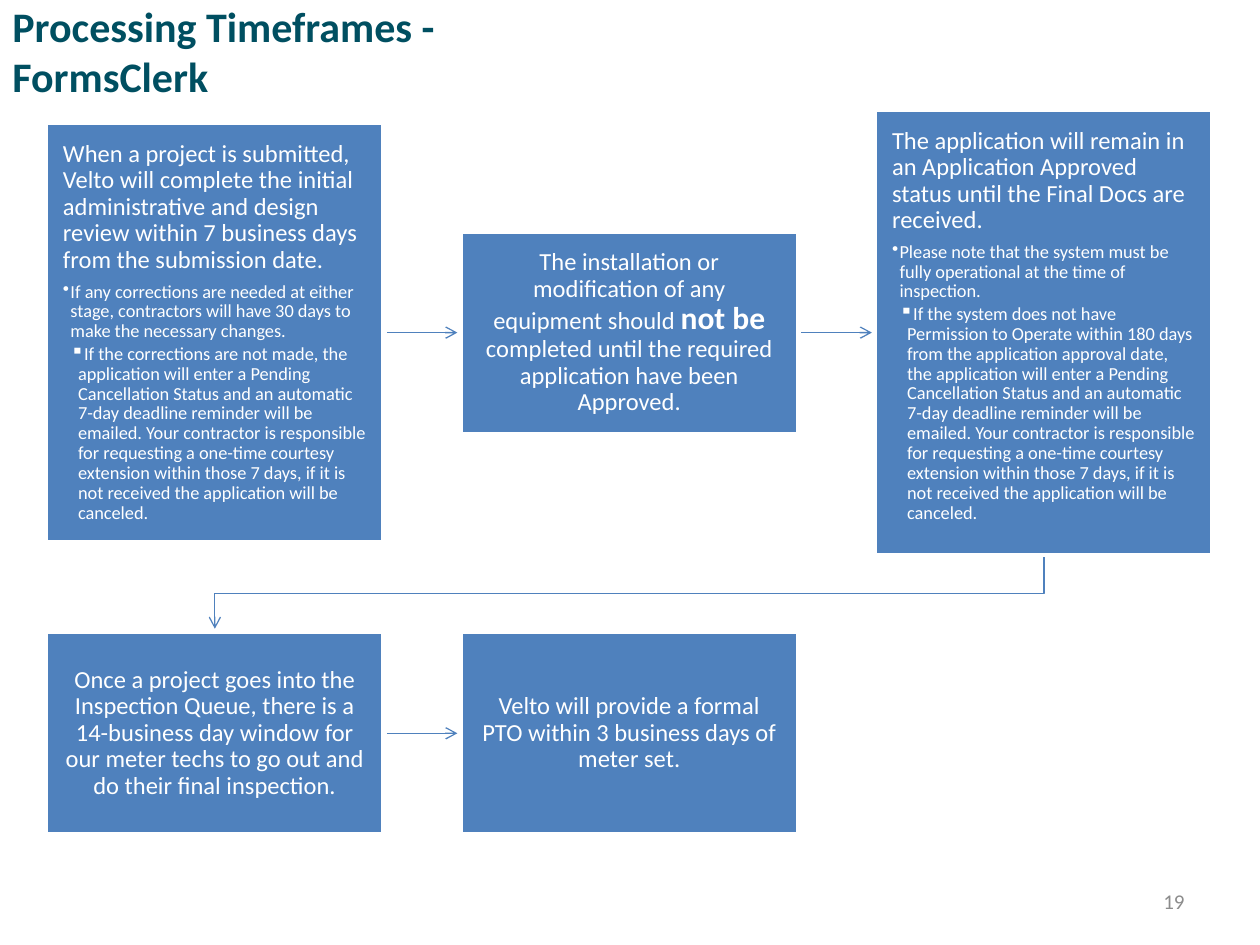
from lxml import etree
from pptx import Presentation
from pptx.dml.color import RGBColor
from pptx.enum.shapes import MSO_CONNECTOR, MSO_SHAPE
from pptx.enum.text import MSO_ANCHOR, PP_ALIGN
from pptx.oxml.ns import qn
from pptx.util import Inches, Pt

TEAL = RGBColor(0x00, 0x4F, 0x61)
BLUE = RGBColor(0x4F, 0x81, 0xBD)
WHITE = RGBColor(0xFF, 0xFF, 0xFF)
GRAY = RGBColor(0x8C, 0x8C, 0x8C)

BOX_W, BOX_H = 2.67, 1.6
COLUMNS = [0.37 + 3.29 * i for i in range(3)]
ROW_1_MID, ROW_2_MID = 2.64, 5.82
GAP = 0.03
BULLETS = ["•", "▪"]

CANCEL_RULE = (
    "the application will enter a Pending Cancellation Status and an automatic "
    "7-day deadline reminder will be emailed. Your contractor is responsible for "
    "requesting a one-time courtesy extension within those 7 days, if it is not "
    "received the application will be canceled."
)
SUBMITTED = [
    "When a project is submitted, Velto will complete the initial administrative "
    "and design review within 7 business days from the submission date.",
    "If any corrections are needed at either stage, contractors will have 30 days "
    "to make the necessary changes.",
    "If the corrections are not made, " + CANCEL_RULE,
]
APPROVED = [
    "The application will remain in an Application Approved status until the "
    "Final Docs are received.",
    "Please note that the system must be fully operational at the time of inspection.",
    "If the system does not have Permission to Operate within 180 days from the "
    "application approval date, " + CANCEL_RULE,
]
INSTALL = [
    ("The installation or modification of any equipment should ", False),
    ("not be ", True),
    ("completed until the required application have been Approved.", False),
]
INSPECTION = [
    ("Once a project goes into the Inspection Queue, there is a 14-business day "
     "window for our meter techs to go out and do their final inspection.", False),
]
PERMISSION = [
    ("Velto will provide a formal PTO within 3 business days of meter set.", False),
]


def format_run(r, size, color, bold=False):
    r.font.name = "Calibri"
    r.font.size = Pt(size)
    r.font.color.rgb = color
    r.font.bold = bold


def add_label(slide, box, text, size, color, bold, anchor, align):
    tb = slide.shapes.add_textbox(*map(Inches, box))
    tf = tb.text_frame
    tf.word_wrap = True
    tf.vertical_anchor = anchor
    tf.text = text
    p = tf.paragraphs[0]
    p.alignment = align
    format_run(p.runs[0], size, color, bold)


def add_box(slide, left, middle, height, anchor):
    s = slide.shapes.add_shape(
        MSO_SHAPE.RECTANGLE, Inches(left), Inches(middle - height / 2),
        Inches(BOX_W), Inches(height))
    s.shadow.inherit = False
    s.fill.solid()
    s.fill.fore_color.rgb = BLUE
    s.line.color.rgb = WHITE
    s.line.width = Pt(2)
    tf = s.text_frame
    tf.word_wrap = True
    tf.vertical_anchor = anchor
    tf.margin_left = tf.margin_right = Inches(0.13)
    tf.margin_top = tf.margin_bottom = Inches(0.14)
    return tf


def add_bullet(p, level):
    p.level = level
    pPr = p._p.get_or_add_pPr()
    pPr.set("marL", str(Inches(0.06 * level)))
    pPr.set("indent", str(Inches(-0.06)))
    etree.SubElement(pPr, qn("a:buChar")).set("char", BULLETS[level - 1])


def add_detail_box(slide, left, middle, height, lines):
    tf = add_box(slide, left, middle, height, MSO_ANCHOR.TOP)
    for level, line in enumerate(lines):
        p = tf.paragraphs[0] if level == 0 else tf.add_paragraph()
        p.text = line
        p.alignment = PP_ALIGN.LEFT
        p.line_spacing = 0.9
        p.space_after = Pt(1.6 if level else 4.9)
        if level:
            add_bullet(p, level)
        format_run(p.runs[0], 10.5 if level else 14, WHITE)


def add_step_box(slide, left, middle, parts):
    p = add_box(slide, left, middle, BOX_H, MSO_ANCHOR.MIDDLE).paragraphs[0]
    p.alignment = PP_ALIGN.CENTER
    p.line_spacing = 0.9
    p.space_after = Pt(4.9)
    for text, strong in parts:
        r = p.add_run()
        r.text = text
        format_run(r, 18 if strong else 14, WHITE, strong)


def style_arrow(s):
    s.line.color.rgb = BLUE
    s.line.width = Pt(0.75)
    etree.SubElement(s.line._get_or_add_ln(), qn("a:tailEnd")).set("type", "arrow")


def add_arrow(slide, column, y):
    start = COLUMNS[column] + BOX_W + GAP
    end = COLUMNS[column + 1] - GAP
    s = slide.shapes.add_connector(
        MSO_CONNECTOR.STRAIGHT, Inches(start), Inches(y), Inches(end), Inches(y))
    style_arrow(s)
    etree.SubElement(s._element.spPr, qn("a:effectLst"))


def add_return_arrow(slide, start_x, end_x, top, turn, bottom):
    points = [(start_x, turn), (end_x, turn), (end_x, bottom)]
    path = slide.shapes.build_freeform(Inches(start_x), Inches(top))
    path.add_line_segments([(Inches(x), Inches(y)) for x, y in points], close=False)
    s = path.convert_to_shape()
    s.fill.background()
    style_arrow(s)
    s.shadow.inherit = False


def add_process(slide):
    first, second, third = COLUMNS
    add_arrow(slide, 0, ROW_1_MID)
    add_detail_box(slide, first, ROW_1_MID, 3.32, SUBMITTED)
    add_arrow(slide, 1, ROW_1_MID)
    add_step_box(slide, second, ROW_1_MID, INSTALL)
    add_return_arrow(slide, third + BOX_W / 2, first + BOX_W / 2, 4.42, 4.71, 4.99)
    add_detail_box(slide, third, ROW_1_MID, 3.53, APPROVED)
    add_arrow(slide, 0, ROW_2_MID)
    add_step_box(slide, first, ROW_2_MID, INSPECTION)
    add_step_box(slide, second, ROW_2_MID, PERMISSION)


def main():
    prs = Presentation()
    prs.slide_width, prs.slide_height = Inches(10), Inches(7.5)
    slide = prs.slides.add_slide(prs.slide_layouts[6])
    add_label(slide, (0, 0.48, 4.59, 0.37), "Processing Timeframes - FormsClerk",
              24, TEAL, True, MSO_ANCHOR.BOTTOM, PP_ALIGN.LEFT)
    add_label(slide, (7.17, 6.95, 2.33, 0.4), "19",
              12, GRAY, False, MSO_ANCHOR.MIDDLE, PP_ALIGN.RIGHT)
    add_process(slide)
    prs.save("out.pptx")


if __name__ == "__main__":
    main()
